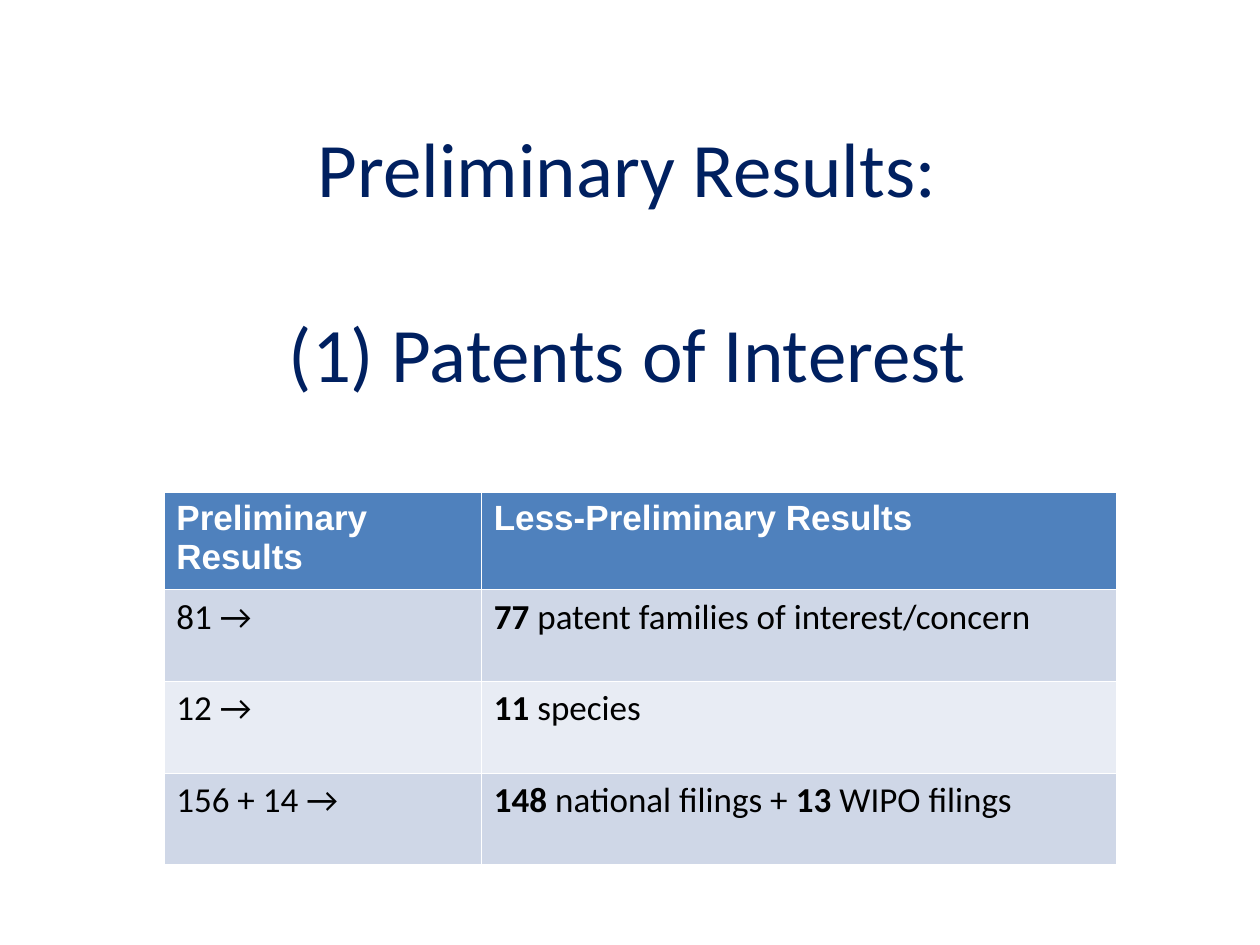
from pptx import Presentation
from pptx.dml.color import RGBColor
from pptx.enum.text import MSO_ANCHOR, PP_ALIGN
from pptx.util import Inches, Pt

COLORS = {
    "title": "002060",
    "header": "4F81BD",
    "header_text": "FFFFFF",
    "body_text": "000000",
    "odd_row": "CFD7E7",
    "even_row": "E8ECF4",
}
# Each cell is a list of (text, bold) runs.
ROWS = [
    [[("Preliminary Results", True)], [("Less-Preliminary Results", True)]],
    [[("81 →", False)],
     [("77", True), (" patent families of interest/concern", False)]],
    [[("12 →", False)], [("11", True), (" species", False)]],
    [[("156 + 14 →", False)],
     [("148", True), (" national filings + ", False),
      ("13", True), (" WIPO filings", False)]],
]
COLUMN_WIDTHS = [2.52, 5.04]
ROW_HEIGHT = 0.73


def add_run(p, text, font, size, color, bold=False):
    r = p.add_run()
    r.text = text
    r.font.name = font
    r.font.size = Pt(size)
    r.font.bold = bold
    r.font.color.rgb = RGBColor.from_string(COLORS[color])


prs = Presentation()
prs.slide_width, prs.slide_height = Inches(10), Inches(7.5)
s = prs.slides.add_slide(prs.slide_layouts[6])

# Title
tf = s.shapes.add_textbox(Inches(0.48), Inches(0.99), Inches(9), Inches(2.13)).text_frame
tf.word_wrap = True
tf.vertical_anchor = MSO_ANCHOR.MIDDLE
tf.margin_left = tf.margin_right = tf.margin_top = tf.margin_bottom = Inches(0.1)
for i, line in enumerate(["Preliminary Results:", "(1) Patents of Interest"]):
    p = tf.paragraphs[0] if i == 0 else tf.add_paragraph()
    p.alignment = PP_ALIGN.CENTER
    p.space_before = Pt(53 * i)
    add_run(p, line, "Calibri", 44, "title")

# Results table; the default table style supplies the white borders
table = s.shapes.add_table(
    len(ROWS), len(COLUMN_WIDTHS), Inches(1.3), Inches(3.91),
    Inches(sum(COLUMN_WIDTHS)), Inches(ROW_HEIGHT * len(ROWS))).table
for column, width in zip(table.columns, COLUMN_WIDTHS):
    column.width = Inches(width)
for i, row in enumerate(ROWS):
    table.rows[i].height = Inches(ROW_HEIGHT)
    if i == 0:
        fill, font, color = "header", "Arial", "header_text"
    else:
        fill = "odd_row" if i % 2 else "even_row"
        font, color = "Calibri", "body_text"
    for j, runs in enumerate(row):
        cell = table.cell(i, j)
        cell.fill.solid()
        cell.fill.fore_color.rgb = RGBColor.from_string(COLORS[fill])
        for text, bold in runs:
            add_run(cell.text_frame.paragraphs[0], text, font, 20, color, bold)

prs.save("out.pptx")
